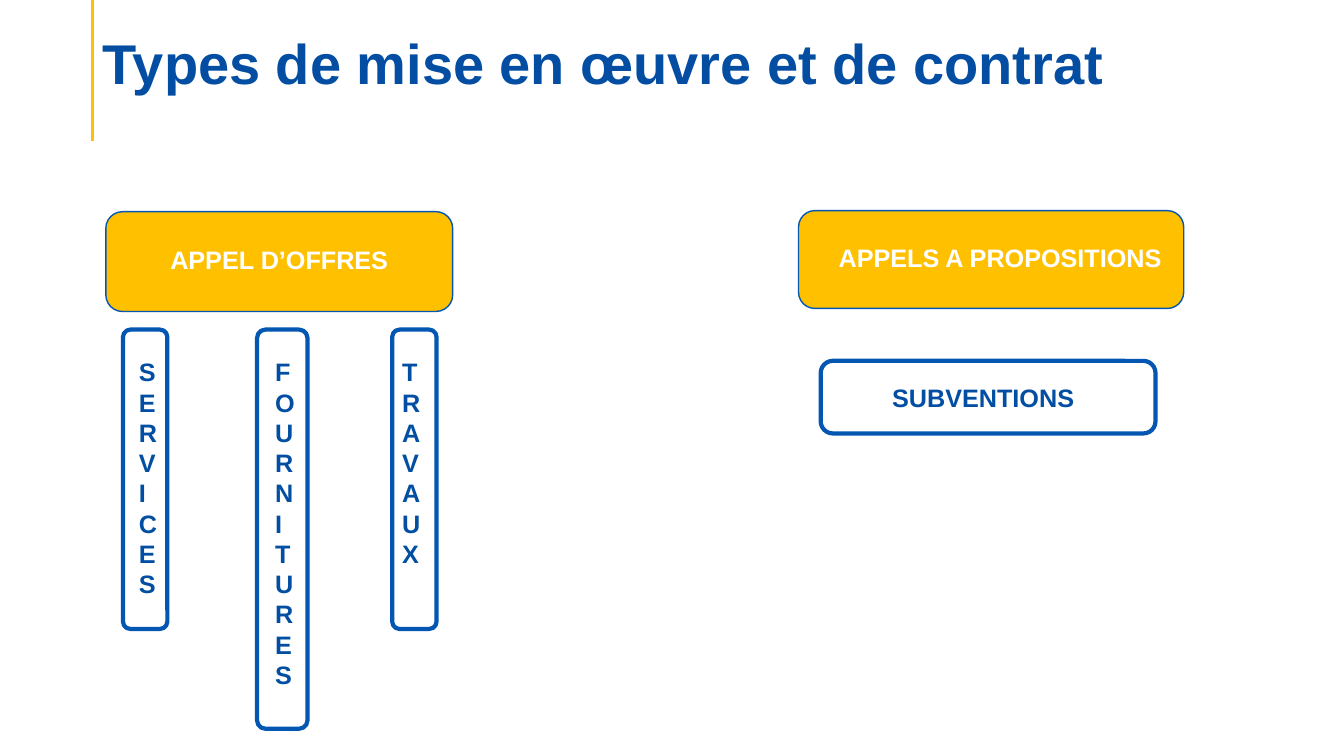
from dataclasses import dataclass

from lxml import etree
from pptx import Presentation
from pptx.dml.color import RGBColor
from pptx.enum import shapes, text
from pptx.oxml import ns
from pptx.util import Inches, Pt


@dataclass(frozen=True)
class Theme:
    font: str = "Arial"
    title_size: int = 40
    label_size: int = 18
    title: str = "034EA2"
    label: str = "024EA2"
    outline: str = "0356B1"
    accent: str = "FFC000"
    white: str = "FFFFFF"


THEME = Theme()


def color(value):
    return RGBColor.from_string(value)


def format_run(r, size, value):
    r.font.name = THEME.font
    r.font.size = Pt(size)
    r.font.bold = True
    r.font.color.rgb = color(value)


def place(sp, left, top, width, height):
    sp.left, sp.top = Inches(left), Inches(top)
    sp.width, sp.height = Inches(width), Inches(height)


def set_title(s, title):
    sp = s.shapes.title
    place(sp, 0.92, -0.35, 11.97, 1.31)
    tf = sp.text_frame
    tf.text = title
    tf.word_wrap = True
    tf.auto_size = text.MSO_AUTO_SIZE.NONE
    tf.vertical_anchor = text.MSO_ANCHOR.BOTTOM
    tf.margin_bottom = 0
    p = tf.paragraphs[0]
    p.alignment = text.PP_ALIGN.LEFT
    p.line_spacing = 0.9
    format_run(p.runs[0], THEME.title_size, THEME.title)


def add_rule(s, x, bottom):
    line = s.shapes.add_connector(
        shapes.MSO_CONNECTOR.STRAIGHT, Inches(x), 0, Inches(x), Inches(bottom))
    line.line.color.rgb = color(THEME.accent)
    line.line.width = Pt(2.25)
    etree.SubElement(line._element.spPr, ns.qn("a:effectLst"))


def add_frame(s, left, top, width, height, line_width, fill=None):
    sp = s.shapes.add_shape(
        shapes.MSO_SHAPE.ROUNDED_RECTANGLE,
        Inches(left), Inches(top), Inches(width), Inches(height))
    sp.shadow.inherit = False
    if fill:
        sp.fill.solid()
        sp.fill.fore_color.rgb = color(fill)
    else:
        sp.fill.background()
    sp.line.color.rgb = color(THEME.outline)
    sp.line.width = Pt(line_width)


def add_label(s, label, left, top, width, height, value, align=text.PP_ALIGN.LEFT):
    sp = s.shapes.add_textbox(Inches(left), Inches(top), Inches(width), Inches(height))
    tf = sp.text_frame
    tf.text = label
    tf.word_wrap = True
    tf.auto_size = text.MSO_AUTO_SIZE.SHAPE_TO_FIT_TEXT
    p = tf.paragraphs[0]
    p.alignment = align
    format_run(p.runs[0], THEME.label_size, value)


def add_procedure(s, label, frame, label_left, label_top):
    add_frame(s, *frame, 1, THEME.accent)
    add_label(s, label, label_left, label_top, 3.64, 0.4, THEME.white,
              text.PP_ALIGN.CENTER)


def add_contract_column(s, label, left, width, height, label_left, label_height):
    add_frame(s, left, 3.27, width, height, 3)
    add_label(s, label, label_left, 3.49, 0.28, label_height, THEME.label)


def main():
    prs = Presentation()
    prs.slide_width, prs.slide_height = Inches(13.33), Inches(7.5)
    s = prs.slides.add_slide(prs.slide_layouts[5])

    set_title(s, "Types de mise en œuvre et de contrat")
    add_rule(s, 0.92, 1.4)

    add_procedure(s, "APPEL D’OFFRES", (1.05, 2.1, 3.44, 0.99), 0.95, 2.37)
    add_procedure(s, "APPELS A PROPOSITIONS", (7.92, 2.09, 3.82, 0.97), 8.1, 2.35)

    add_contract_column(s, "SERVICES", 1.22, 0.44, 2.97, 1.28, 2.52)
    add_contract_column(s, "FOURNITURES", 2.55, 0.5, 3.96, 2.63, 3.43)
    add_contract_column(s, "TRAVAUX", 3.89, 0.44, 2.97, 3.89, 2.22)

    add_frame(s, 8.14, 3.58, 3.32, 0.72, 3)
    add_label(s, "SUBVENTIONS", 8.75, 3.74, 2.11, 0.4, THEME.label)

    prs.save("out.pptx")


if __name__ == "__main__":
    main()
